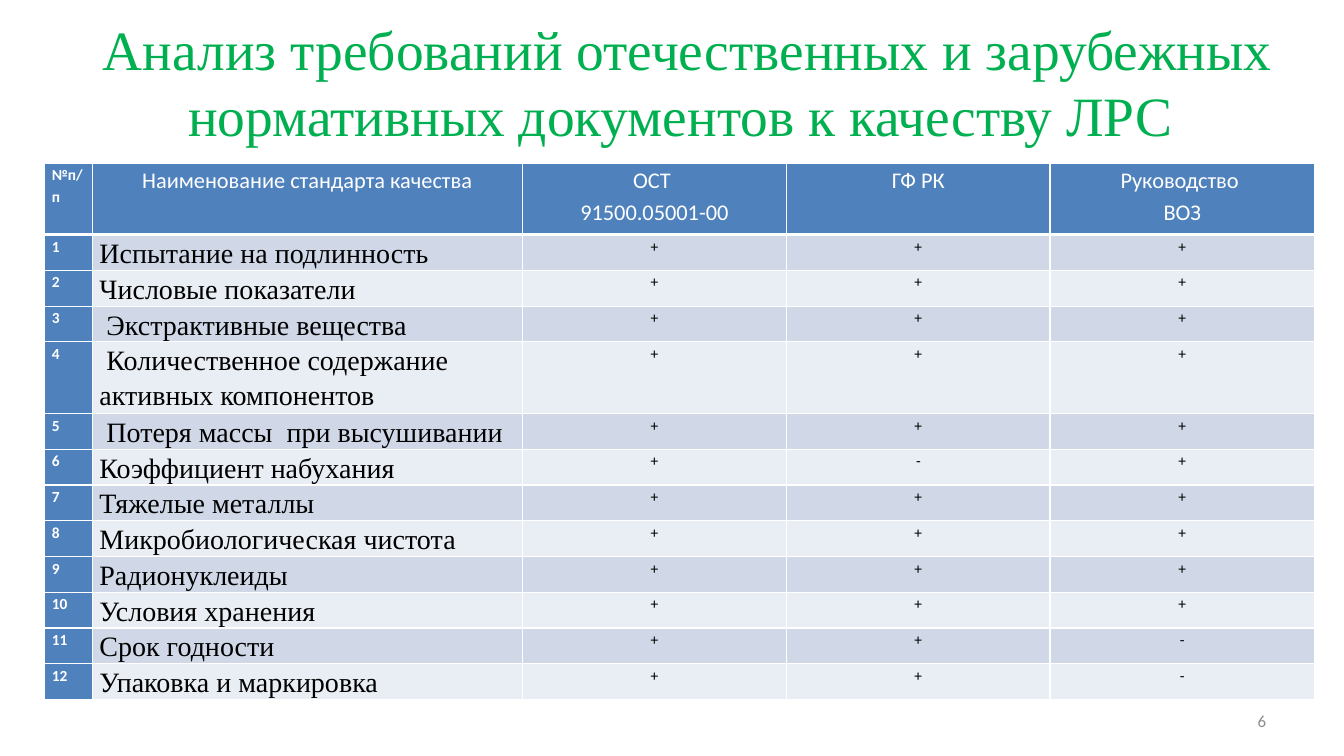
from dataclasses import dataclass

from lxml import etree
from pptx import Presentation
from pptx import util as u
from pptx.dml import color
from pptx.enum import text
from pptx.oxml import ns

LEFT, CENTER, RIGHT = text.PP_ALIGN.LEFT, text.PP_ALIGN.CENTER, text.PP_ALIGN.RIGHT


@dataclass(frozen=True)
class Theme:
    heading_font: str = "Times New Roman"
    body_font: str = "Calibri"
    green: str = "00B050"
    blue: str = "4F81BD"
    white: str = "FFFFFF"
    black: str = "000000"
    grey: str = "8C8C8C"
    bands: tuple = ("D0D8E8", "E9EDF4")
    title_size: float = 39.6
    standard_size: float = 20
    standard_leading: float = 25
    header_size: float = 16
    number_size: float = 12
    mark_size: float = 11


def write(frame, content, *, font, size, ink, bold=False, align=LEFT, spacing=None):
    for index, line in enumerate(content.split("\n")):
        paragraph = frame.add_paragraph() if index else frame.paragraphs[0]
        paragraph.text = line
        paragraph.alignment = align
        paragraph.line_spacing = spacing
        for run in paragraph.runs:
            run.font.name = font
            run.font.size = u.Pt(size)
            run.font.bold = bold
            run.font.color.rgb = color.RGBColor.from_string(ink)


class SlideBuilder:
    def __init__(self, slide, theme):
        self.slide = slide
        self.theme = theme

    def label(self, content, left, top, width, height, **style):
        box = self.slide.shapes.add_textbox(*map(u.Pt, (left, top, width, height)))
        box.text_frame.word_wrap = True
        box.text_frame.vertical_anchor = text.MSO_ANCHOR.MIDDLE
        write(box.text_frame, content, **style)

    def table(self, left, top, widths, heights):
        frame = self.slide.shapes.add_table(
            len(heights), len(widths),
            *map(u.Pt, (left, top, sum(widths), sum(heights))))
        grid = frame.table
        grid.horz_banding = False
        for column, width in zip(grid.columns, widths):
            column.width = u.Pt(width)
        for row, height in zip(grid.rows, heights):
            row.height = u.Pt(height)
        return grid

    def border(self, cell, edge, width):
        properties = cell._tc.get_or_add_tcPr()
        line = etree.SubElement(properties, ns.qn(f"a:ln{edge}"), w=str(u.Pt(width)))
        fill = etree.SubElement(line, ns.qn("a:solidFill"))
        etree.SubElement(fill, ns.qn("a:srgbClr"), val=self.theme.white)

    def cell(self, cell, content, fill, top=1, bottom=1, **style):
        cell.margin_left = cell.margin_right = u.Pt(5)
        cell.margin_top = cell.margin_bottom = 0
        for edge, width in (("L", 1), ("R", 1), ("T", top), ("B", bottom)):
            self.border(cell, edge, width)
        cell.fill.solid()
        cell.fill.fore_color.rgb = color.RGBColor.from_string(fill)
        write(cell.text_frame, content, **style)


HEADERS = ["№п/п", "Наименование стандарта качества", "ОСТ \n91500.05001-00",
           "ГФ РК", "Руководство \nВОЗ"]
STANDARDS = [
    ("Испытание на подлинность", "+++"),
    ("Числовые показатели", "+++"),
    (" Экстрактивные вещества", "+++"),
    (" Количественное содержание активных компонентов", "+++"),
    (" Потеря массы  при высушивании", "+++"),
    ("Коэффициент набухания", "+-+"),
    ("Тяжелые металлы", "+++"),
    ("Микробиологическая чистота", "+++"),
    ("Радионуклеиды", "+++"),
    ("Условия хранения", "+++"),
    ("Срок годности", "++-"),
    ("Упаковка и маркировка", "++-"),
]
COLUMN_WIDTHS = [34, 307, 189, 188, 189]
ROW_HEIGHT = 25.55
TWO_LINE_ROWS = (0, 4)


def main():
    deck = Presentation()
    deck.slide_width, deck.slide_height = u.Pt(960), u.Pt(540)
    theme = Theme()
    builder = SlideBuilder(deck.slides.add_slide(deck.slide_layouts[6]), theme)

    builder.label("Анализ требований отечественных и зарубежных\v"
                  "нормативных документов к качеству ЛРС ",
                  48, 21.5, 886, 73, font=theme.heading_font,
                  size=theme.title_size, ink=theme.green, align=CENTER)

    heights = [ROW_HEIGHT * (2 if row in TWO_LINE_ROWS else 1)
               for row in range(len(STANDARDS) + 1)]
    requirements = builder.table(32, 116.5, COLUMN_WIDTHS, heights)

    body = dict(font=theme.body_font, spacing=1.15)
    index_style = dict(body, size=theme.mark_size, ink=theme.white, bold=True)
    header_style = dict(body, size=theme.header_size, ink=theme.white, align=CENTER)
    mark_style = dict(body, size=theme.mark_size, ink=theme.black, align=CENTER)
    standard_style = dict(font=theme.heading_font, size=theme.standard_size,
                          ink=theme.black, spacing=u.Pt(theme.standard_leading))

    for column, header in enumerate(HEADERS):
        style = header_style if column else index_style
        builder.cell(requirements.cell(0, column), header, theme.blue, bottom=3, **style)

    for row, (standard, marks) in enumerate(STANDARDS, 1):
        band = theme.bands[(row - 1) % 2]
        top = 3 if row == 1 else 1
        builder.cell(requirements.cell(row, 0), str(row), theme.blue, top, **index_style)
        builder.cell(requirements.cell(row, 1), standard, band, top, **standard_style)
        for column, mark in enumerate(marks, 2):
            builder.cell(requirements.cell(row, column), mark, band, top, **mark_style)

    builder.label("6", 687.5, 500.5, 224, 29, font=theme.body_font,
                  size=theme.number_size, ink=theme.grey, align=RIGHT)
    deck.save("out.pptx")


if __name__ == "__main__":
    main()
